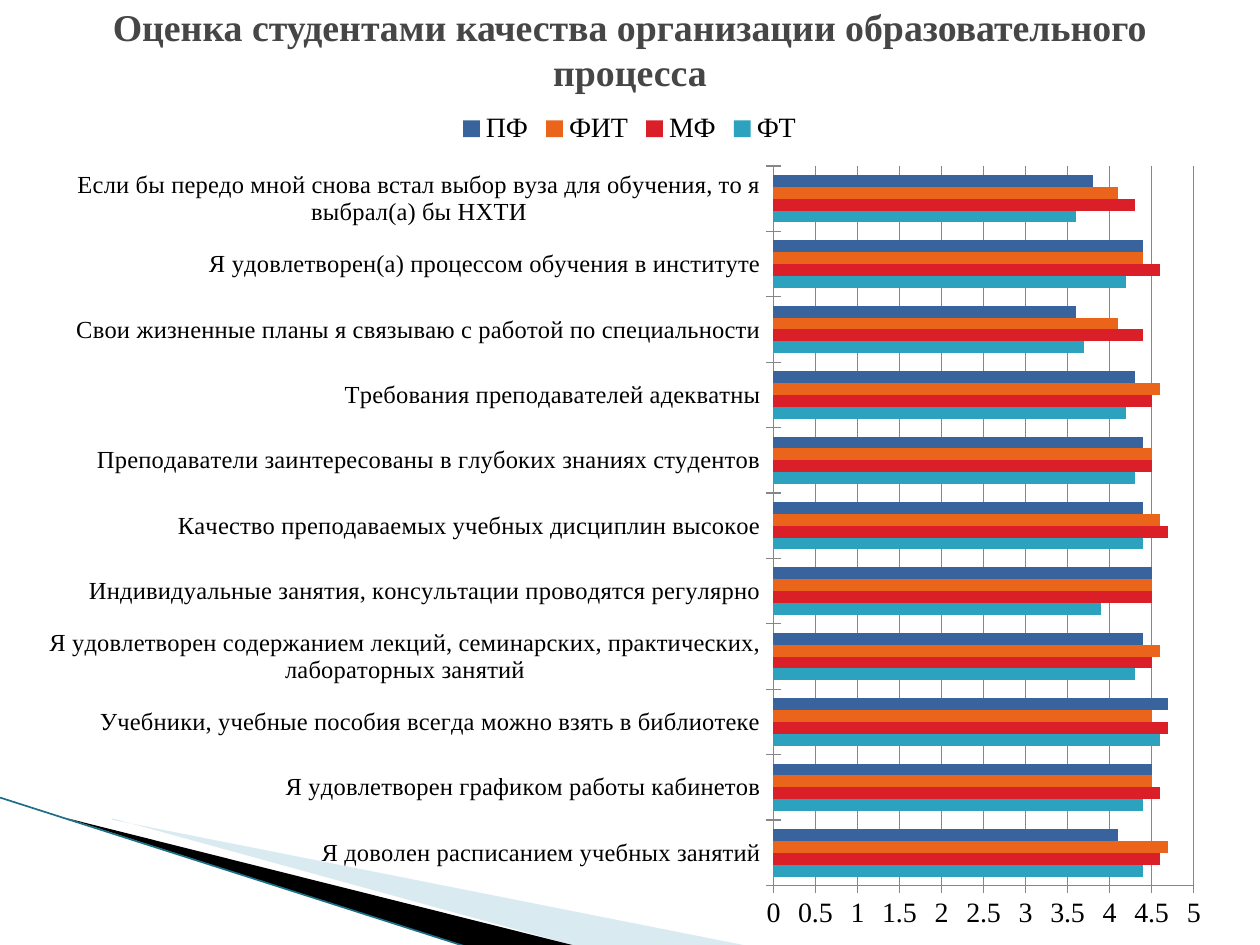
from dataclasses import dataclass

from lxml.etree import SubElement
from pptx import Presentation
from pptx.chart.data import CategoryChartData
from pptx.dml.color import RGBColor
from pptx.enum.chart import XL_CHART_TYPE, XL_LEGEND_POSITION, XL_TICK_MARK
from pptx.enum.shapes import MSO_CONNECTOR
from pptx.enum.text import MSO_ANCHOR, PP_ALIGN
from pptx.oxml import parse_xml
from pptx.oxml.ns import nsdecls, qn
from pptx.util import Inches, Pt


@dataclass(frozen=True)
class Theme:
    font: str = "Times New Roman"
    title_size: float = 21.6
    chart_size: float = 16
    category_size: float = 14
    title: str = "464646"
    text: str = "000000"
    axis: str = "868686"
    pale_wedge: str = "A0CBDC"
    dark_wedge: str = "000000"
    edge: str = "1B6F86"


THEME = Theme()
WIDTH, HEIGHT = 10, 7.5

TITLE = "Оценка студентами качества организации образовательного процесса"
STATEMENTS = [
    "Я доволен расписанием учебных занятий",
    "Я удовлетворен графиком работы кабинетов",
    "Учебники, учебные пособия всегда можно взять в библиотеке",
    "Я удовлетворен содержанием лекций, семинарских, практических, лабораторных занятий",
    "Индивидуальные занятия, консультации проводятся регулярно",
    "Качество преподаваемых учебных дисциплин высокое",
    "Преподаватели заинтересованы в глубоких знаниях студентов",
    "Требования преподавателей адекватны",
    "Свои жизненные планы я связываю с работой по специальности",
    "Я удовлетворен(а) процессом обучения в институте",
    "Если бы передо мной снова встал выбор вуза для обучения, то я выбрал(а) бы НХТИ",
]
FACULTIES = [
    ("ФТ", "2DA2BF", [4.4, 4.4, 4.6, 4.3, 3.9, 4.4, 4.3, 4.2, 3.7, 4.2, 3.6]),
    ("МФ", "DA1F28", [4.6, 4.6, 4.7, 4.5, 4.5, 4.7, 4.5, 4.5, 4.4, 4.6, 4.3]),
    ("ФИТ", "EB641B", [4.7, 4.5, 4.5, 4.6, 4.5, 4.6, 4.5, 4.6, 4.1, 4.4, 4.1]),
    ("ПФ", "39639D", [4.1, 4.5, 4.7, 4.4, 4.5, 4.4, 4.4, 4.3, 3.6, 4.4, 3.8]),
]


def color(value):
    return RGBColor.from_string(value)


def set_font(font, size, fill, bold=False):
    font.name = THEME.font
    font.size = Pt(size)
    font.bold = bold
    font.color.rgb = color(fill)


def add_text(slide, box, text, *, size, fill, bold=False, align=PP_ALIGN.CENTER):
    shape = slide.shapes.add_textbox(*map(Inches, box))
    frame = shape.text_frame
    frame.word_wrap = True
    frame.vertical_anchor = MSO_ANCHOR.MIDDLE
    paragraph = frame.paragraphs[0]
    paragraph.alignment = align
    run = paragraph.add_run()
    run.text = text
    set_font(run.font, size, fill, bold)


def add_wedge(slide, points, fill, opacity=100):
    start, *rest = [(Inches(x), Inches(y)) for x, y in points]
    builder = slide.shapes.build_freeform(*start)
    builder.add_line_segments(rest, close=True)
    shape = builder.convert_to_shape()
    shape.shadow.inherit = False
    shape.line.fill.background()
    shape.fill.solid()
    shape.fill.fore_color.rgb = color(fill)
    if opacity < 100:
        tint = shape.fill._xPr.find(".//" + qn("a:srgbClr"))
        SubElement(tint, qn("a:alpha"), val=str(opacity * 1000))


def add_corner(slide, box):
    left, top, width, height = box

    def place(points):
        return [(left + x * width, top + y * height) for x, y in points]

    pale = [(0.15, 0.15), (1, 1), (0.77, 1), (0.15, 0.14)]
    dark = [(0.09, 0.14), (0.77, 1), (0.62, 1), (0.09, 0.14)]
    add_wedge(slide, place(pale), THEME.pale_wedge, 40)
    add_wedge(slide, place(dark), THEME.dark_wedge)
    start, end = place([(0, 0), (0.62, 1)])
    edge = slide.shapes.add_connector(MSO_CONNECTOR.STRAIGHT, *map(Inches, start + end))
    edge.line.color.rgb = color(THEME.edge)
    edge.line.width = Pt(0.95)
    SubElement(edge._element.spPr, qn("a:effectLst"))


def set_plot_area(chart, **shares):
    values = "".join(f'<c:{name} val="{share}"/>' for name, share in shares.items())
    layout = parse_xml(
        f'<c:layout {nsdecls("c")}><c:manualLayout><c:layoutTarget val="inner"/>'
        f'<c:xMode val="edge"/><c:yMode val="edge"/>{values}</c:manualLayout></c:layout>'
    )
    plot_area = chart._chartSpace.chart.plotArea
    for previous in plot_area.findall(qn("c:layout")):
        plot_area.remove(previous)
    plot_area.insert(0, layout)


def style_axis(axis, size):
    axis.major_tick_mark = XL_TICK_MARK.CROSS
    axis.minor_tick_mark = XL_TICK_MARK.NONE
    axis.format.line.color.rgb = color(THEME.axis)
    set_font(axis.tick_labels.font, size, THEME.text)


def add_ratings(slide, box):
    data = CategoryChartData(number_format="General")
    data.categories = STATEMENTS
    for name, _, values in FACULTIES:
        data.add_series(name, values)
    frame = slide.shapes.add_chart(XL_CHART_TYPE.BAR_CLUSTERED, *map(Inches, box), data)
    chart = frame.chart
    chart.has_title = False
    set_font(chart.font, THEME.chart_size, THEME.text)
    chart.has_legend = True
    chart.legend.position = XL_LEGEND_POSITION.TOP
    chart.legend.include_in_layout = False
    set_font(chart.legend.font, THEME.chart_size, THEME.text)
    plot = chart.plots[0]
    plot.vary_by_categories = False
    plot.gap_width = 150
    for series, (_, fill, _) in zip(plot.series, FACULTIES):
        series.format.fill.solid()
        series.format.fill.fore_color.rgb = color(fill)
    style_axis(chart.category_axis, THEME.category_size)
    style_axis(chart.value_axis, THEME.chart_size)
    scale = chart.value_axis
    scale.minimum_scale, scale.maximum_scale, scale.major_unit = 0, 5, 0.5
    scale.has_major_gridlines = True
    scale.major_gridlines.format.line.color.rgb = color(THEME.axis)
    set_plot_area(chart, x=0.62, y=0.08, w=0.35, h=0.85)


def main():
    presentation = Presentation()
    presentation.slide_width = Inches(WIDTH)
    presentation.slide_height = Inches(HEIGHT)
    slide = presentation.slides.add_slide(presentation.slide_layouts[6])
    title_height = 0.78
    add_corner(slide, (0, 6.33, 5.95, 1.18))
    add_text(slide, (0.5, 0, 0.9 * WIDTH, title_height), TITLE,
             size=THEME.title_size, fill=THEME.title, bold=True)
    add_ratings(slide, (0.23, title_height, 9.53, HEIGHT - title_height))
    presentation.save("out.pptx")


if __name__ == "__main__":
    main()
